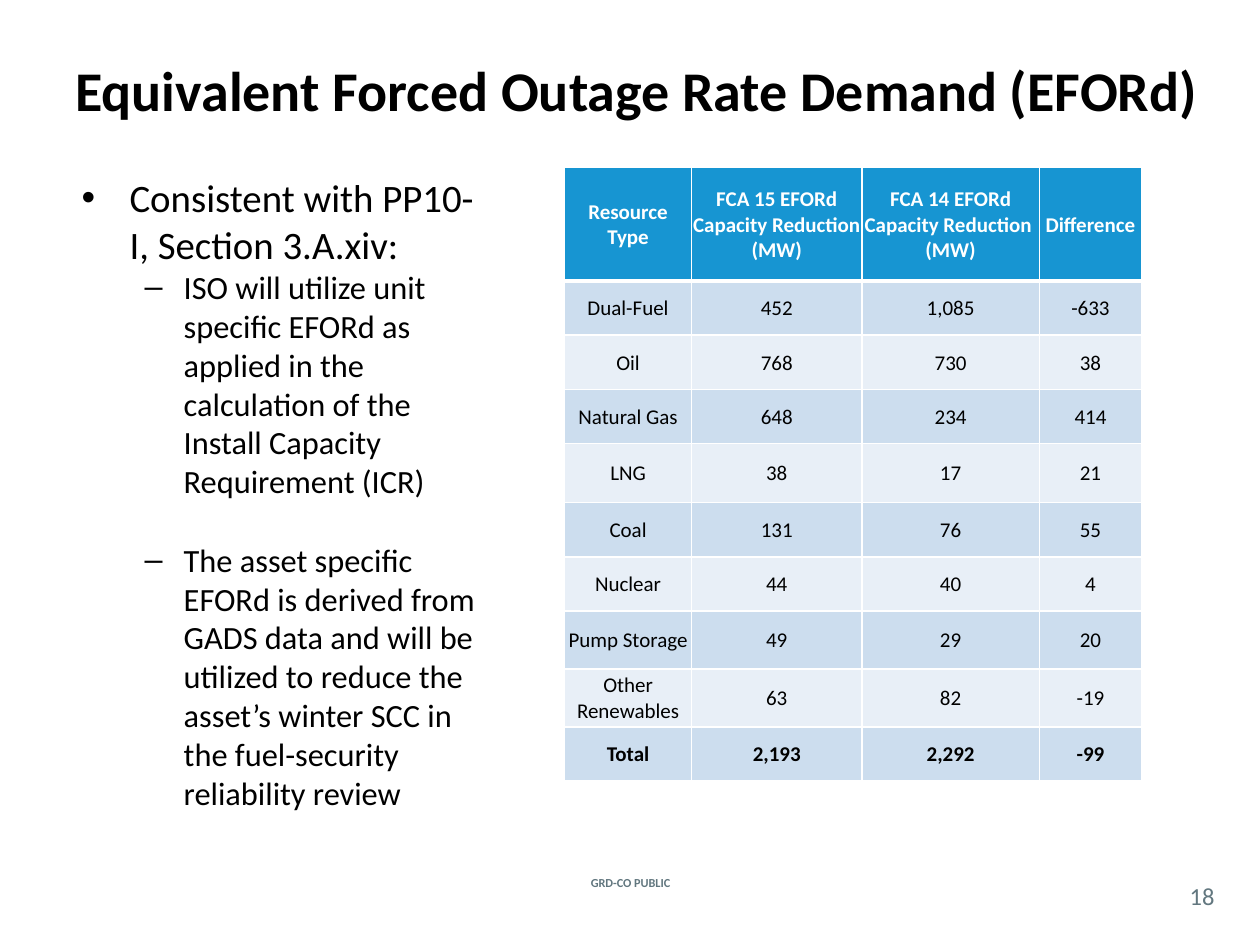
from dataclasses import dataclass

from lxml import etree
from pptx import Presentation, util as u
from pptx.dml.color import RGBColor
from pptx.enum import text as t
from pptx.oxml import ns

BLACK = RGBColor(0x00, 0x00, 0x00)
WHITE = RGBColor(0xFF, 0xFF, 0xFF)
SLATE = RGBColor(0x62, 0x77, 0x7F)
HEADER_BLUE = RGBColor(0x17, 0x95, 0xD2)
BANDS = (RGBColor(0xCC, 0xDD, 0xEE), RGBColor(0xE8, 0xEF, 0xF7))

FONT = "Calibri"
GRID = u.Inches(0.1)  # the slide is 100 columns by 75 rows
CELL_INSET = u.Inches(0.01)


def cells_to_length(count: float) -> int:
    return round(count * GRID)


@dataclass
class Box:
    column: float
    row: float
    columns: float
    rows: float

    def lengths(self) -> list[int]:
        return [cells_to_length(n) for n in (self.column, self.row, self.columns, self.rows)]


@dataclass
class Label:
    box: Box
    wording: str
    font: dict
    align: t.PP_ALIGN = t.PP_ALIGN.CENTER
    inset: float = 0


@dataclass
class Bullet:
    wording: str
    mark: str
    level: int
    size: float
    indent: float
    hanging: float
    space_before: float = 0


LABELS = [
    Label(Box(5, 0.8, 91.5, 12.5), "Equivalent Forced Outage Rate Demand (EFORd)",
          {"size": u.Pt(32), "bold": True, "color": BLACK}, t.PP_ALIGN.LEFT, 1),
    Label(Box(42.7, 69.2, 14.7, 1.7), "GRD-CO PUBLIC",
          {"size": u.Pt(7), "bold": True, "color": SLATE}),
    Label(Box(93.3, 69.6, 4.2, 2.9), "18", {"size": u.Pt(14), "color": SLATE}),
]

BULLETS_BOX = Box(5.5, 13.3, 34.5, 52.4)
BULLETS = [
    Bullet("Consistent with PP10-I, Section 3.A.xiv:", "•", 0, 22.2, 3.8, 3.8),
    Bullet("ISO will utilize unit specific EFORd as applied in the calculation of the "
           "Install Capacity Requirement (ICR)", "–", 1, 18.5, 8.1, 3.1),
    Bullet("The asset specific EFORd is derived from GADS data and will be utilized to "
           "reduce the asset’s winter SCC in the fuel-security reliability review",
           "–", 1, 18.5, 8.1, 3.1, space_before=22.5),
]

TABLE_BOX = Box(44.8, 13.3, 45.8, 48.7)
COLUMN_WIDTHS = (10.1, 13.5, 14.1, 8.1)
ROW_HEIGHTS = (9, 4.3, 4.3, 4.3, 4.7, 4.3, 4.3, 4.6, 4.6, 4.3)
ROWS = [
    ("Resource Type", "FCA 15 EFORd Capacity Reduction \n(MW)",
     "FCA 14 EFORd Capacity Reduction \n(MW)", "Difference"),
    ("Dual-Fuel", "452", "1,085", "-633"),
    ("Oil", "768", "730", "38"),
    ("Natural Gas", "648", "234", "414"),
    ("LNG", "38", "17", "21"),
    ("Coal", "131", "76", "55"),
    ("Nuclear", "44", "40", "4"),
    ("Pump Storage", "49", "29", "20"),
    ("Other Renewables", "63", "82", "-19"),
    ("Total", "2,193", "2,292", "-99"),
]


def apply(target, values: dict) -> None:
    for name, value in values.items():
        setattr(target, name, value)


def style_font(font, values: dict) -> None:
    apply(font, {"name": FONT} | {k: v for k, v in values.items() if k != "color"})
    font.color.rgb = values["color"]


def add_text_frame(slide, box: Box, anchor, side: float, edge: float):
    frame = slide.shapes.add_textbox(*box.lengths()).text_frame
    apply(frame, {
        "word_wrap": True, "auto_size": t.MSO_AUTO_SIZE.NONE, "vertical_anchor": anchor,
        "margin_left": cells_to_length(side), "margin_right": cells_to_length(side),
        "margin_top": cells_to_length(edge), "margin_bottom": cells_to_length(edge),
    })
    return frame


def add_label(slide, label: Label) -> None:
    frame = add_text_frame(slide, label.box, t.MSO_ANCHOR.MIDDLE, label.inset, label.inset / 2)
    paragraph = frame.paragraphs[0]
    paragraph.text = label.wording
    paragraph.alignment = label.align
    style_font(paragraph.runs[0].font, label.font)


def add_bullets(slide, box: Box, bullets: list[Bullet]) -> None:
    frame = add_text_frame(slide, box, t.MSO_ANCHOR.TOP, 1, 0.5)
    for index, bullet in enumerate(bullets):
        paragraph = frame.add_paragraph() if index else frame.paragraphs[0]
        apply(paragraph, {"text": bullet.wording, "level": bullet.level,
                          "space_before": u.Pt(bullet.space_before)})
        properties = paragraph._p.get_or_add_pPr()
        properties.set("marL", str(cells_to_length(bullet.indent)))
        properties.set("indent", str(-cells_to_length(bullet.hanging)))
        etree.SubElement(properties, ns.qn("a:buFont")).set("typeface", "Arial")
        etree.SubElement(properties, ns.qn("a:buChar")).set("char", bullet.mark)
        style_font(paragraph.runs[0].font, {"size": u.Pt(bullet.size), "color": BLACK})


def set_borders(cell, widths: dict[str, float]) -> None:
    properties = cell._tc.get_or_add_tcPr()
    for index, (side, width) in enumerate(widths.items()):
        line = etree.Element(ns.qn(f"a:ln{side}"), w=str(u.Pt(width)))
        fill = etree.SubElement(line, ns.qn("a:solidFill"))
        etree.SubElement(fill, ns.qn("a:srgbClr")).set("val", str(WHITE))
        properties.insert(index, line)


def fill_cell(cell, wording: str, row: int) -> None:
    is_header = row == 0
    apply(cell, {"text": wording, "vertical_anchor": t.MSO_ANCHOR.MIDDLE,
                 "margin_left": CELL_INSET, "margin_right": CELL_INSET,
                 "margin_top": CELL_INSET, "margin_bottom": 0})
    cell.fill.solid()
    cell.fill.fore_color.rgb = HEADER_BLUE if is_header else BANDS[(row - 1) % 2]
    for paragraph in cell.text_frame.paragraphs:
        paragraph.alignment = t.PP_ALIGN.CENTER
        style_font(paragraph.runs[0].font, {
            "size": u.Pt(12), "bold": row in (0, len(ROWS) - 1),
            "color": WHITE if is_header else BLACK})
    # The rule under the header is heavier than the others
    set_borders(cell, {"L": 1, "R": 1, "T": 3 if row == 1 else 1, "B": 3 if is_header else 1})


def add_outage_table(slide) -> None:
    table = slide.shapes.add_table(len(ROWS), len(COLUMN_WIDTHS), *TABLE_BOX.lengths()).table
    apply(table, {"first_row": True, "horz_banding": False})
    for column, width in zip(table.columns, COLUMN_WIDTHS):
        column.width = cells_to_length(width)
    for row, height in zip(table.rows, ROW_HEIGHTS):
        row.height = cells_to_length(height)
    for row, wordings in enumerate(ROWS):
        for column, wording in enumerate(wordings):
            fill_cell(table.cell(row, column), wording, row)


def main() -> None:
    presentation = Presentation()
    apply(presentation, {"slide_width": 100 * GRID, "slide_height": 75 * GRID})
    slide = presentation.slides.add_slide(presentation.slide_layouts[6])

    # Title, footer and page number
    for label in LABELS:
        add_label(slide, label)

    # Explanation on the left, figures on the right
    add_bullets(slide, BULLETS_BOX, BULLETS)
    add_outage_table(slide)

    presentation.save("out.pptx")


if __name__ == "__main__":
    main()
